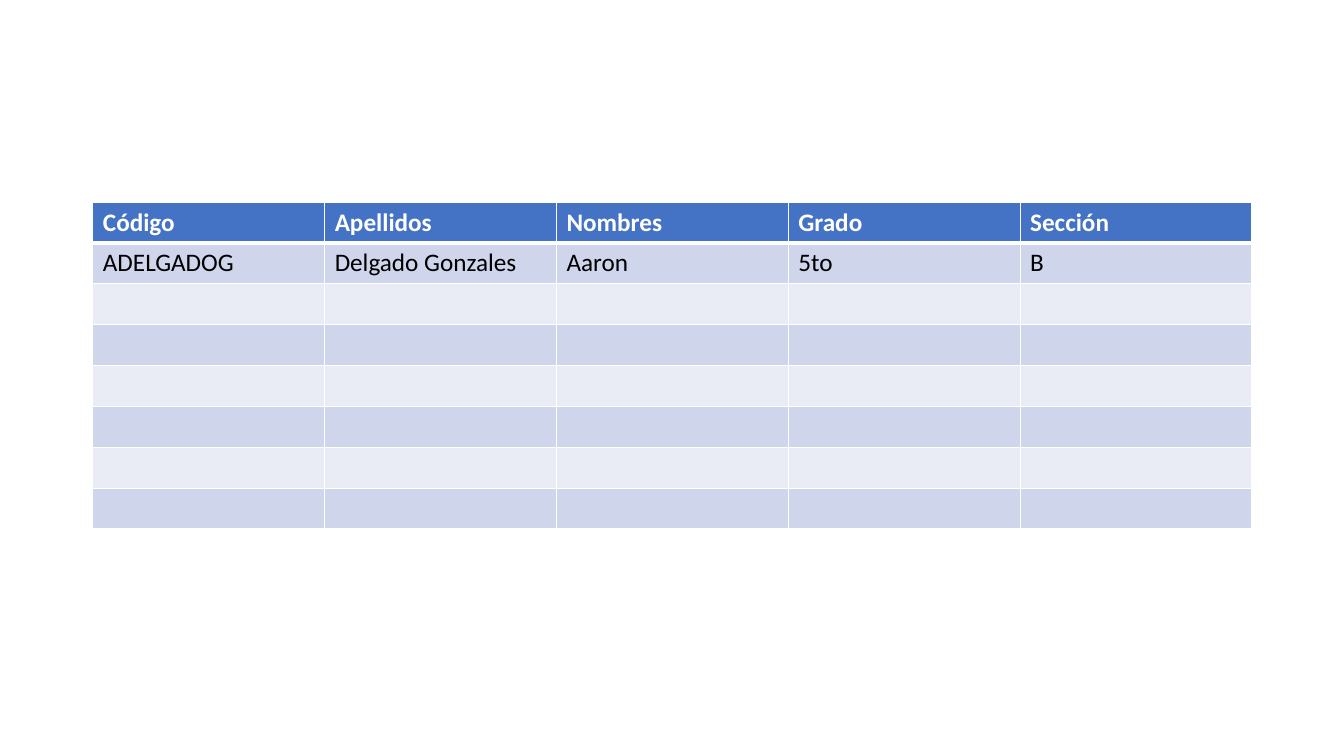
from lxml import etree
from pptx import Presentation
from pptx.dml.color import RGBColor
from pptx.oxml.ns import qn
from pptx.util import Cm, Pt

HEADS = ["Código", "Apellidos", "Nombres", "Grado", "Sección"]
PUPILS = [["ADELGADOG", "Delgado Gonzales", "Aaron", "5to", "B"]]
SPARE = 6


def color(code):
    return RGBColor.from_string(code)


class Page:
    font, size = "Calibri", 18
    head, bands = "4472C4", ("CFD5EA", "E9EBF5")
    light, dark = "FFFFFF", "000000"
    thin, thick = 1, 3

    def __init__(self, deck):
        self.slide = deck.slides.add_slide(deck.slide_layouts[6])

    def edge(self, cell, side, width):
        """Draw one border; side is L, R, T or B. Call before filling the cell."""
        props = cell._tc.get_or_add_tcPr()
        line = etree.SubElement(props, qn(f"a:ln{side}"), w=str(Pt(width)))
        fill = etree.SubElement(line, qn("a:solidFill"))
        etree.SubElement(fill, qn("a:srgbClr"), val=self.light)

    def cell(self, cell, text, row):
        top = self.thick if row == 1 else self.thin
        base = self.thick if row == 0 else self.thin
        for side, width in zip("LRTB", (self.thin, self.thin, top, base)):
            self.edge(cell, side, width)
        cell.fill.solid()
        fill = self.bands[(row - 1) % 2] if row else self.head
        cell.fill.fore_color.rgb = color(fill)
        cell.text_frame.text = text
        font = cell.text_frame.paragraphs[0].font
        runs = cell.text_frame.paragraphs[0].runs
        for font in [font] + [run.font for run in runs]:
            font.name, font.size, font.bold = self.font, Pt(self.size), row == 0
            font.color.rgb = color(self.dark if row else self.light)

    def table(self, left, top, width, height, rows):
        count = len(rows[0])
        table = self.slide.shapes.add_table(
            len(rows), count, Cm(left), Cm(top), Cm(width), Cm(height)).table
        for r, texts in enumerate(rows):
            for c, text in enumerate(texts):
                self.cell(table.cell(r, c), text, r)


def main():
    deck = Presentation()
    deck.slide_width, deck.slide_height = Cm(33.87), Cm(19.05)
    blank = [[""] * len(HEADS)] * SPARE
    Page(deck).table(2.34, 5.09, 29.21, 8.24, [HEADS] + PUPILS + blank)
    deck.save("out.pptx")


if __name__ == "__main__":
    main()
